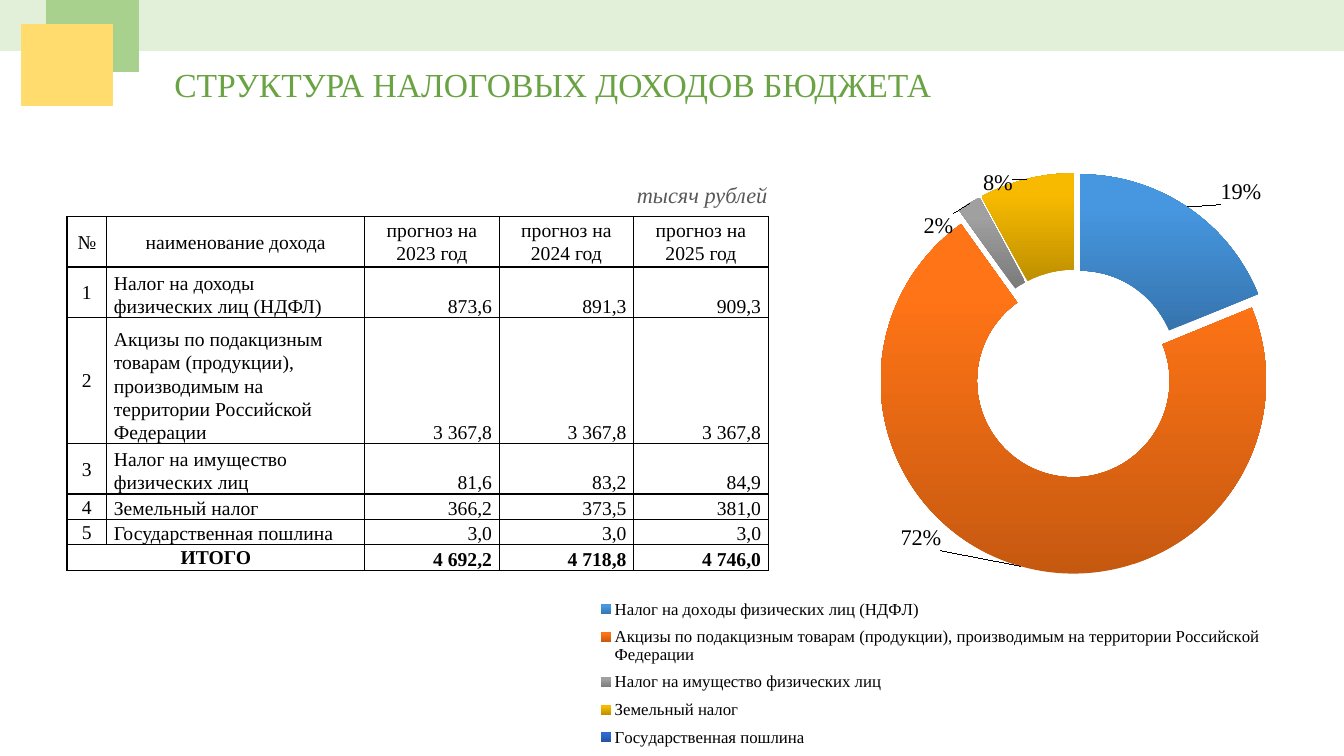
from copy import deepcopy

from pptx import Presentation
from pptx.chart.data import CategoryChartData
from pptx.dml.color import RGBColor
from pptx.enum.chart import XL_CHART_TYPE, XL_LEGEND_POSITION
from pptx.enum.shapes import MSO_SHAPE
from pptx.enum.text import MSO_ANCHOR, PP_ALIGN
from pptx.oxml import parse_xml
from pptx.oxml.ns import nsdecls, qn
from pptx.util import Cm, Pt

RECTANGLE = MSO_SHAPE.RECTANGLE
LEFT, CENTER, RIGHT = PP_ALIGN.LEFT, PP_ALIGN.CENTER, PP_ALIGN.RIGHT
MIDDLE, BOTTOM = MSO_ANCHOR.MIDDLE, MSO_ANCHOR.BOTTOM
DOUGHNUT = XL_CHART_TYPE.DOUGHNUT
LEGEND_BOTTOM = XL_LEGEND_POSITION.BOTTOM

FONT = "Times New Roman"
COLORS = {
    "title": "6AA343",
    "band": "E2F0D9",
    "green": "A9D18E",
    "yellow": "FFDC6D",
    "unit": "595959",
    "text": "000000",
}


def style_font(font, size, color, bold=False, italic=False):
    font.name = FONT
    font.size = Pt(size)
    font.bold = bold
    font.italic = italic
    font.color.rgb = RGBColor.from_string(COLORS[color])


def chart_layout(x, y, width=None, height=None, target=""):
    modes = "" if width is None else '<c:xMode val="edge"/><c:yMode val="edge"/>'
    size = "" if width is None else f'<c:w val="{width}"/><c:h val="{height}"/>'
    return parse_xml(
        f'<c:layout {nsdecls("c")}><c:manualLayout>{target}{modes}'
        f'<c:x val="{x}"/><c:y val="{y}"/>{size}</c:manualLayout></c:layout>'
    )


presentation = Presentation()
presentation.slide_width = Cm(33.87)
presentation.slide_height = Cm(19.05)
slide = presentation.slides.add_slide(presentation.slide_layouts[5])

# Title
title = slide.shapes.title
title.left, title.top, title.width, title.height = Cm(4.14), Cm(1.47), Cm(19.8), Cm(1.28)
title.text_frame.text = "СТРУКТУРА НАЛОГОВЫХ ДОХОДОВ БЮДЖЕТА"
title.text_frame.word_wrap = False
title.text_frame.vertical_anchor = MIDDLE
title.text_frame.paragraphs[0].alignment = LEFT
style_font(title.text_frame.paragraphs[0].runs[0].font, 24, "title")

# Header band and corner squares
for color, left, top, width, height in [
    ("band", 0, 0, 33.87, 1.28),
    ("green", 1.18, 0, 2.32, 1.81),
    ("yellow", 0.54, 0.63, 2.29, 2.02),
]:
    block = slide.shapes.add_shape(RECTANGLE, Cm(left), Cm(top), Cm(width), Cm(height))
    block.shadow.inherit = False
    block.fill.solid()
    block.fill.fore_color.rgb = RGBColor.from_string(COLORS[color])
    block.line.color.rgb = RGBColor.from_string(COLORS[color])
    block.line.width = Pt(1)

# Tax table
rows = [
    ["№", "наименование дохода", "прогноз на 2023 год", "прогноз на 2024 год", "прогноз на 2025 год"],
    ["1", "Налог на доходы физических лиц (НДФЛ)", "873,6", "891,3", "909,3"],
    ["2", "Акцизы по подакцизным товарам (продукции), производимым на территории Российской Федерации",
     "3 367,8", "3 367,8", "3 367,8"],
    ["3", "Налог на имущество физических лиц", "81,6", "83,2", "84,9"],
    ["4", "Земельный налог", "366,2", "373,5", "381,0"],
    ["5", "Государственная пошлина", "3,0", "3,0", "3,0"],
    ["ИТОГО", "", "4 692,2", "4 718,8", "4 746,0"],
]
column_widths = [1.0, 6.5, 3.39, 3.39, 3.39]
row_heights = [1.27, 1.27, 3.18, 1.27, 0.64, 0.64, 0.64]
table = slide.shapes.add_table(
    len(rows), len(column_widths), Cm(1.69), Cm(5.46), Cm(sum(column_widths)), Cm(sum(row_heights))
).table
for column, width in zip(table.columns, column_widths):
    column.width = Cm(width)
for row, height in zip(table.rows, row_heights):
    row.height = Cm(height)
last_row = len(rows) - 1
table.cell(last_row, 0).merge(table.cell(last_row, 1))

for row_index, texts in enumerate(rows):
    for column_index, text in enumerate(texts):
        cell = table.cell(row_index, column_index)
        cell.fill.background()
        cell.margin_left = cell.margin_right = Cm(0.18)
        cell.margin_top = cell.margin_bottom = 0
        centered = row_index == 0 or column_index == 0
        cell.vertical_anchor = MIDDLE if centered else BOTTOM
        properties = cell._tc.get_or_add_tcPr()
        for position, side in enumerate(["lnL", "lnR", "lnT", "lnB"]):
            properties.insert(position, parse_xml(
                f'<a:{side} {nsdecls("a")} w="12700"><a:solidFill>'
                f'<a:srgbClr val="{COLORS["text"]}"/></a:solidFill></a:{side}>'
            ))
        if cell.is_spanned:
            continue
        cell.text_frame.text = text
        paragraph = cell.text_frame.paragraphs[0]
        paragraph.line_spacing = 1.07
        paragraph.alignment = CENTER if centered else LEFT if column_index == 1 else RIGHT
        style_font(paragraph.runs[0].font, 14, "text", bold=row_index == last_row)

# Doughnut chart: category, percent, dark and light gradient colours, label offset
slices = [
    (rows[1][1], 19, "3674AD", "4697E0", (0.1, -0.09)),
    (rows[2][1], 72, "C65910", "FF7416", (-0.14, 0.03)),
    (rows[3][1], 2, "7B7B7B", "A0A0A0", (-0.07, -0.03)),
    (rows[4][1], 8, "BE8F00", "F7BA00", (-0.05, -0.07)),
    (rows[5][1], 0, "2451A1", "2F69D1", (0, 0)),
]
chart_data = CategoryChartData()
chart_data.categories = [entry[0] for entry in slices]
chart_data.add_series("Series 1", [entry[1] for entry in slices])
chart = slide.shapes.add_chart(
    DOUGHNUT, Cm(12.8), Cm(3.63), Cm(20.29), Cm(15.42), chart_data
).chart
chart.has_title = False
chart.font.name = "Calibri"
chart.font.size = Pt(10)
chart.font.color.rgb = RGBColor.from_string(COLORS["text"])
chart_space = chart._chartSpace
chart_space.find(qn("c:txPr")).addprevious(parse_xml(
    f'<c:spPr {nsdecls("c", "a")}><a:noFill/><a:ln><a:noFill/></a:ln></c:spPr>'
))

# Plot area and legend placement
plot_area = chart_space.chart.plotArea
for old_layout in plot_area.findall(qn("c:layout")):
    plot_area.remove(old_layout)
plot_area.insert(0, chart_layout(0.46, 0.06, 0.49, 0.63, '<c:layoutTarget val="inner"/>'))
chart.has_legend = True
chart.legend.position = LEGEND_BOTTOM
chart.legend.include_in_layout = False
style_font(chart.legend.font, 12, "text")
legend = chart.legend._element
for old_layout in legend.findall(qn("c:layout")):
    legend.remove(old_layout)
legend.find(qn("c:legendPos")).addnext(chart_layout(0.09, 0.73, 0.87, 0.27))

# Slice labels
plot = chart.plots[0]
plot.vary_by_categories = True
series = plot.series[0]
labels = series.data_labels
labels.show_value = True
labels.number_format = '0"%"'
labels.number_format_is_linked = False
style_font(labels.font, 16, "text")
label_settings = [child for child in labels._element if child.tag != qn("c:showLeaderLines")]

for index, (name, percent, dark, light, offset) in enumerate(slices):
    fill = series.points[index].format.fill
    fill.gradient()
    fill.gradient_angle = 90
    for stop, color, position in zip(fill.gradient_stops, (dark, light), (0, 0.8)):
        stop.color.rgb = RGBColor.from_string(color)
        stop.position = position
    point = series._element.findall(qn("c:dPt"))[index]
    point.find(qn("c:spPr")).addprevious(parse_xml(f'<c:explosion {nsdecls("c")} val="8"/>'))
    label = parse_xml(f'<c:dLbl {nsdecls("c")}><c:idx val="{index}"/></c:dLbl>')
    label.append(chart_layout(*offset))
    for setting in label_settings:
        label.append(deepcopy(setting))
    labels._element.insert(index, label)

# Unit caption
caption = slide.shapes.add_textbox(Cm(15.8), Cm(4.45), Cm(3.86), Cm(0.94))
caption.text_frame.word_wrap = False
caption.text_frame.text = "тысяч рублей"
style_font(caption.text_frame.paragraphs[0].runs[0].font, 16, "unit", italic=True)

presentation.save("out.pptx")
